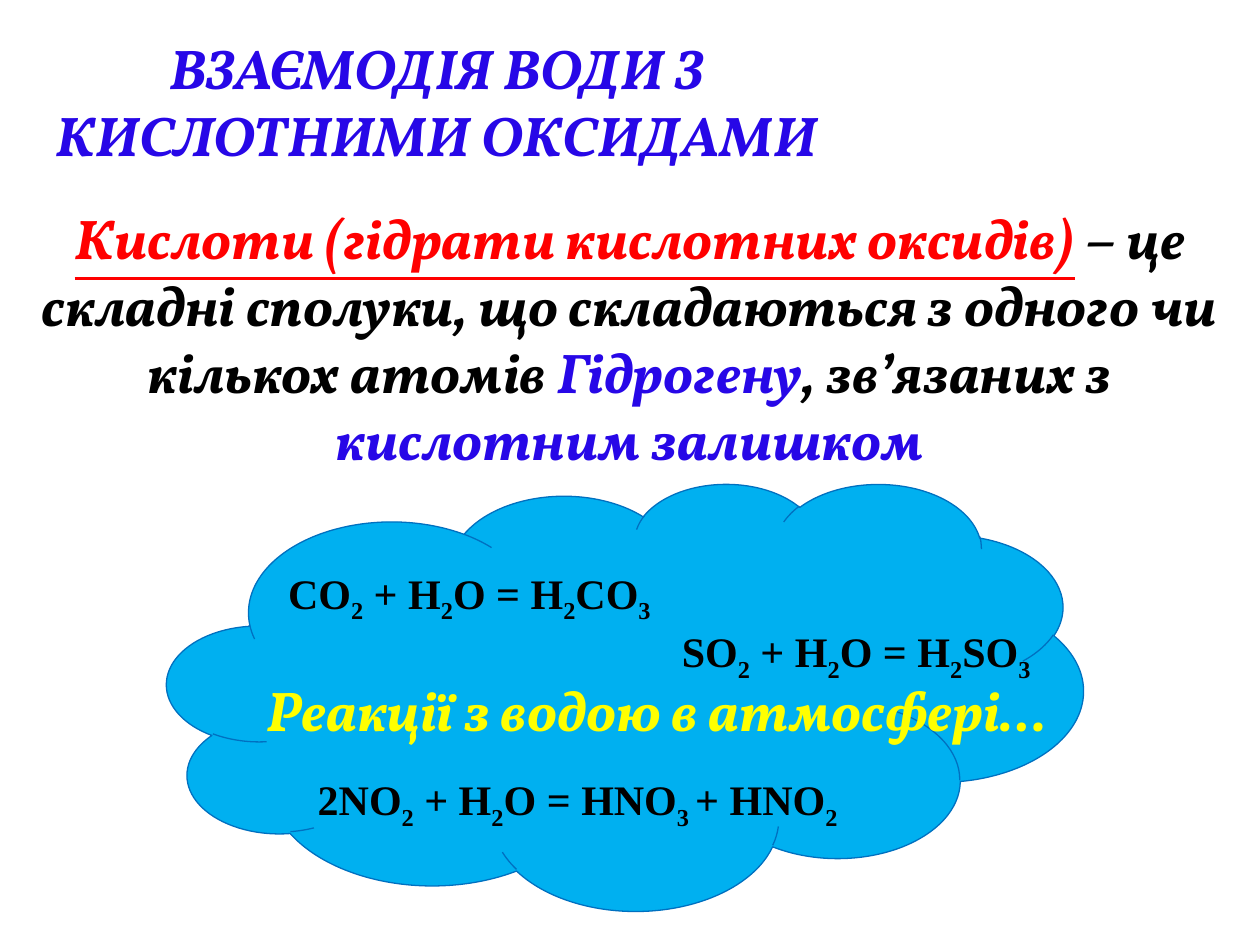
"""Build a slide on the reaction of water with acidic oxides."""
from dataclasses import dataclass

from lxml.etree import SubElement
from pptx import Presentation
from pptx.dml.color import RGBColor
from pptx.enum.shapes import MSO_SHAPE
from pptx.enum.text import MSO_ANCHOR, PP_ALIGN
from pptx.oxml.ns import qn
from pptx.util import Pt


@dataclass(frozen=True)
class Theme:
    white: RGBColor = RGBColor(0xFF, 0xFF, 0xFF)
    black: RGBColor = RGBColor(0, 0, 0)
    red: RGBColor = RGBColor(0xFF, 0, 0)
    blue: RGBColor = RGBColor(0x27, 0x07, 0xE7)
    yellow: RGBColor = RGBColor(0xFF, 0xFF, 0)
    cloud: RGBColor = RGBColor(0, 0xB0, 0xF0)
    cloud_line: RGBColor = RGBColor(0, 0x70, 0xC0)
    display: str = "Vollkorn"
    formula: str = "Times New Roman"
    display_size: Pt = Pt(32)
    formula_size: Pt = Pt(24)


theme = Theme()


def style_display(tf, anchor=MSO_ANCHOR.TOP):
    """Set up a centred frame in the display face and return its paragraph."""
    tf.word_wrap = True
    tf.vertical_anchor = anchor
    p = tf.paragraphs[0]
    p.alignment = PP_ALIGN.CENTER
    p.font.name = theme.display
    p.font.size = theme.display_size
    p.font.bold = p.font.italic = True
    return p


def add_run(p, text, color):
    """Append a coloured run and return it."""
    r = p.add_run()
    r.text = text
    r.font.color.rgb = color
    return r


prs = Presentation()
prs.slide_width, prs.slide_height = Pt(720), Pt(540)
s = prs.slides.add_slide(prs.slide_layouts[6])

definition = s.shapes.add_shape(MSO_SHAPE.RECTANGLE, Pt(0), Pt(112.5), Pt(720), Pt(227.5))
definition.shadow.inherit = False
definition.fill.solid()
definition.fill.fore_color.rgb = theme.white
SubElement(definition.fill._xPr.find(".//" + qn("a:srgbClr")), qn("a:alpha"), val="46000")
definition.line.fill.background()
p = style_display(definition.text_frame)
add_run(p, "Кислоти (гідрати кислотних оксидів)", theme.red).font.underline = True
for text, color in (
    (" – це складні сполуки, що складаються з одного чи кількох атомів ", theme.black),
    ("Гідрогену", theme.blue),
    (", зв’язаних з ", theme.black),
    ("кислотним залишком", theme.blue),
):
    add_run(p, text, color)

cloud = s.shapes.add_shape(MSO_SHAPE.CLOUD, Pt(95.5), Pt(276), Pt(523.5), Pt(244))
cloud.shadow.inherit = False
cloud.fill.solid()
cloud.fill.fore_color.rgb = theme.cloud
cloud.line.color.rgb = theme.cloud_line
cloud.line.width = Pt(0.75)

reactions = (
    ("SO_2_ + H_2_O = H_2_SO_3", 382.5, 354, 270),
    ("СО_2_ + Н_2_О = Н_2_СО_3", 157.5, 320.5, 248),
    ("2NO_2_ + H_2_O = HNO_3 _+ HNO_2", 174.5, 438.5, 332),
)
for equation, left, top, width in reactions:
    tf = s.shapes.add_textbox(Pt(left), Pt(top), Pt(width), Pt(90)).text_frame
    tf.word_wrap = True
    p = tf.paragraphs[0]
    p.font.name = theme.formula
    p.font.size = theme.formula_size
    p.font.bold = True
    for i, part in enumerate(equation.split("_")):
        r = add_run(p, part, theme.black)
        if i % 2:
            r.font._element.set("baseline", "-25000")

headings = (
    ("ВЗАЄМОДІЯ ВОДИ З КИСЛОТНИМИ ОКСИДАМИ", theme.blue, 8.5, 15, 482, 85, MSO_ANCHOR.MIDDLE),
    ("Реакції з водою в атмосфері…", theme.yellow, 73.5, 382.5, 604, 46, MSO_ANCHOR.TOP),
)
for text, color, left, top, width, height, anchor in headings:
    box = s.shapes.add_textbox(Pt(left), Pt(top), Pt(width), Pt(height))
    add_run(style_display(box.text_frame, anchor), text, color)

prs.save("out.pptx")
